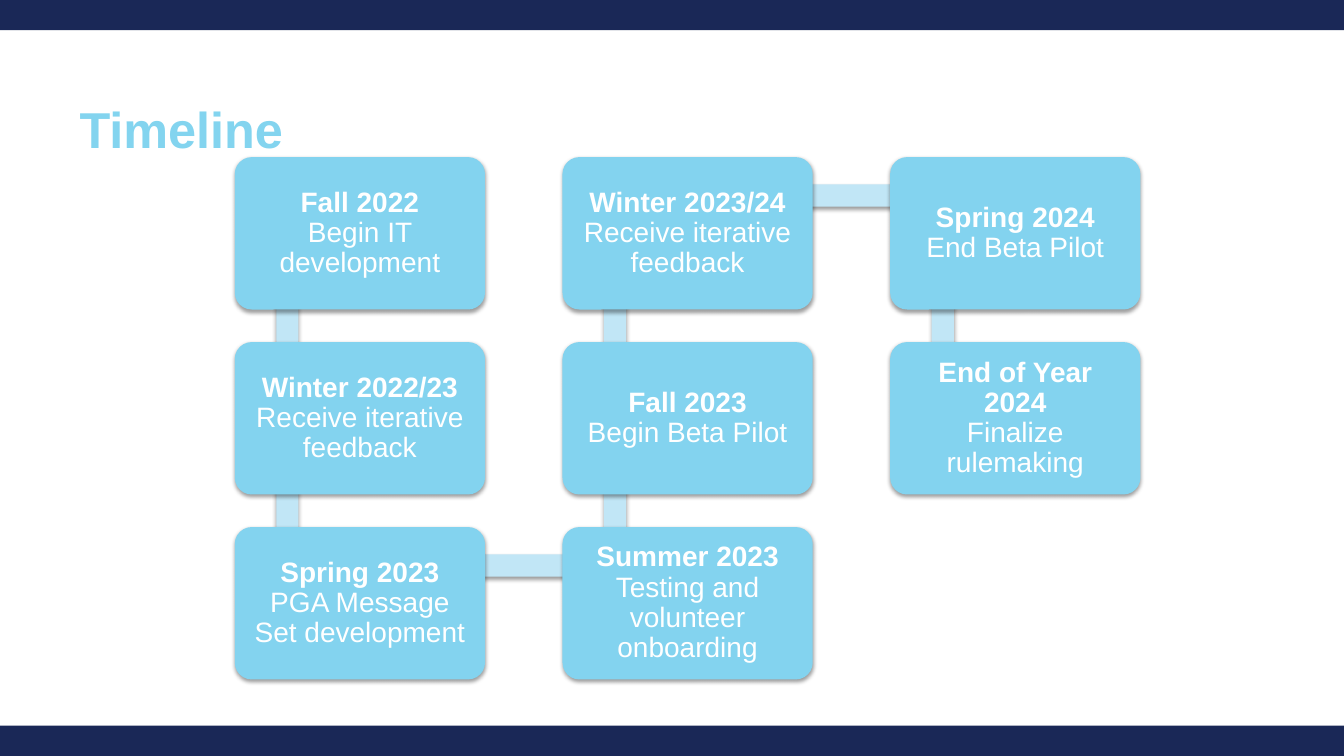
"""Build a timeline slide whose milestones snake through a three-column grid."""
from lxml import etree
from pptx import Presentation, util as u
from pptx.dml.color import RGBColor
from pptx.enum import shapes, text
from pptx.oxml import ns

NAVY = RGBColor(0x1A, 0x28, 0x57)
SKY = RGBColor(0x83, 0xD3, 0xEF)
PALE = RGBColor(0xC1, 0xE6, 0xF6)
HEAD = RGBColor(0x83, 0xD4, 0xEF)
WHITE = RGBColor(0xFF, 0xFF, 0xFF)

WIDE, TALL, BAND = 13.33, 7.5, 0.3
LEFT, TOP = 2.35, 1.58
COL, ROW = 3.25, 1.835
BOX_W, BOX_H = 2.44, 1.47
NODE_X, NODE_Y, THICK = 0.5, 0.36, 0.22

steps = [
    (0, 0, "Fall 2022", "Begin IT development"),
    (0, 1, "Winter 2022/23", "Receive iterative feedback"),
    (0, 2, "Spring 2023", "PGA Message Set development"),
    (1, 2, "Summer 2023", "Testing and volunteer onboarding"),
    (1, 1, "Fall 2023", "Begin Beta Pilot"),
    (1, 0, "Winter 2023/24", "Receive iterative feedback"),
    (2, 0, "Spring 2024", "End Beta Pilot"),
    (2, 1, "End of Year 2024", "Finalize rulemaking"),
]

deck = Presentation()
deck.slide_width, deck.slide_height = u.Inches(WIDE), u.Inches(TALL)
slide = deck.slides.add_slide(deck.slide_layouts[6])


def add_run(para, words, size=20, color=WHITE, bold=False):
    run = para.add_run()
    run.text = words
    run.font.name, run.font.size, run.font.bold = "Arial", u.Pt(size), bold
    run.font.color.rgb = color


def add_block(x, y, w, h, fill, kind=shapes.MSO_SHAPE.RECTANGLE, shade=True):
    block = slide.shapes.add_shape(kind, *map(u.Inches, (x, y, w, h)))
    block.shadow.inherit = False
    block.fill.solid()
    block.fill.fore_color.rgb = fill
    block.line.fill.background()
    if shade:
        glow = etree.SubElement(
            block.element.spPr.find(ns.qn("a:effectLst")), ns.qn("a:outerShdw"),
            blurRad=str(u.Pt(3.1)), dist=str(u.Pt(1.6)), dir="5400000", rotWithShape="0")
        tint = etree.SubElement(glow, ns.qn("a:srgbClr"), val="000000")
        etree.SubElement(tint, ns.qn("a:alpha"), val="38000")
    return block


for y in (TALL - BAND, 0):
    add_block(0, y, WIDE, BAND, NAVY, shade=False)

title = slide.shapes.add_textbox(*map(u.Inches, (0.69, 0.85, 11.99, 1.22))).text_frame
title.word_wrap = True
title.margin_top = u.Inches(0.12)
add_run(title.paragraphs[0], "Timeline", size=36, color=HEAD, bold=True)

spots = [(LEFT + col * COL, TOP + row * ROW) for col, row, _, _ in steps]
for i, (x, y) in enumerate(spots):
    if i + 1 < len(spots):
        far_x, far_y = spots[i + 1]
        dx, dy = abs(far_x - x), abs(far_y - y)
        bar_x, bar_y = min(x, far_x) + NODE_X, min(y, far_y) + NODE_Y
        if dx:
            add_block(bar_x, bar_y - THICK / 2, dx, THICK, PALE)
        else:
            add_block(bar_x - THICK / 2, bar_y, THICK, dy, PALE)

    box = add_block(x, y, BOX_W, BOX_H, SKY, shapes.MSO_SHAPE.ROUNDED_RECTANGLE)
    box.adjustments[0] = 0.1
    box.line.color.rgb, box.line.width = SKY, u.Pt(3)
    frame = box.text_frame
    frame.word_wrap = True
    frame.vertical_anchor = text.MSO_ANCHOR.MIDDLE
    frame.margin_left = frame.margin_right = u.Inches(0.12)
    frame.margin_top = frame.margin_bottom = u.Inches(0.08)
    para = frame.paragraphs[0]
    para.alignment, para.line_spacing = text.PP_ALIGN.CENTER, 0.9
    _, _, date, task = steps[i]
    add_run(para, date, bold=True)
    para.add_line_break()
    add_run(para, task)

deck.save("out.pptx")
